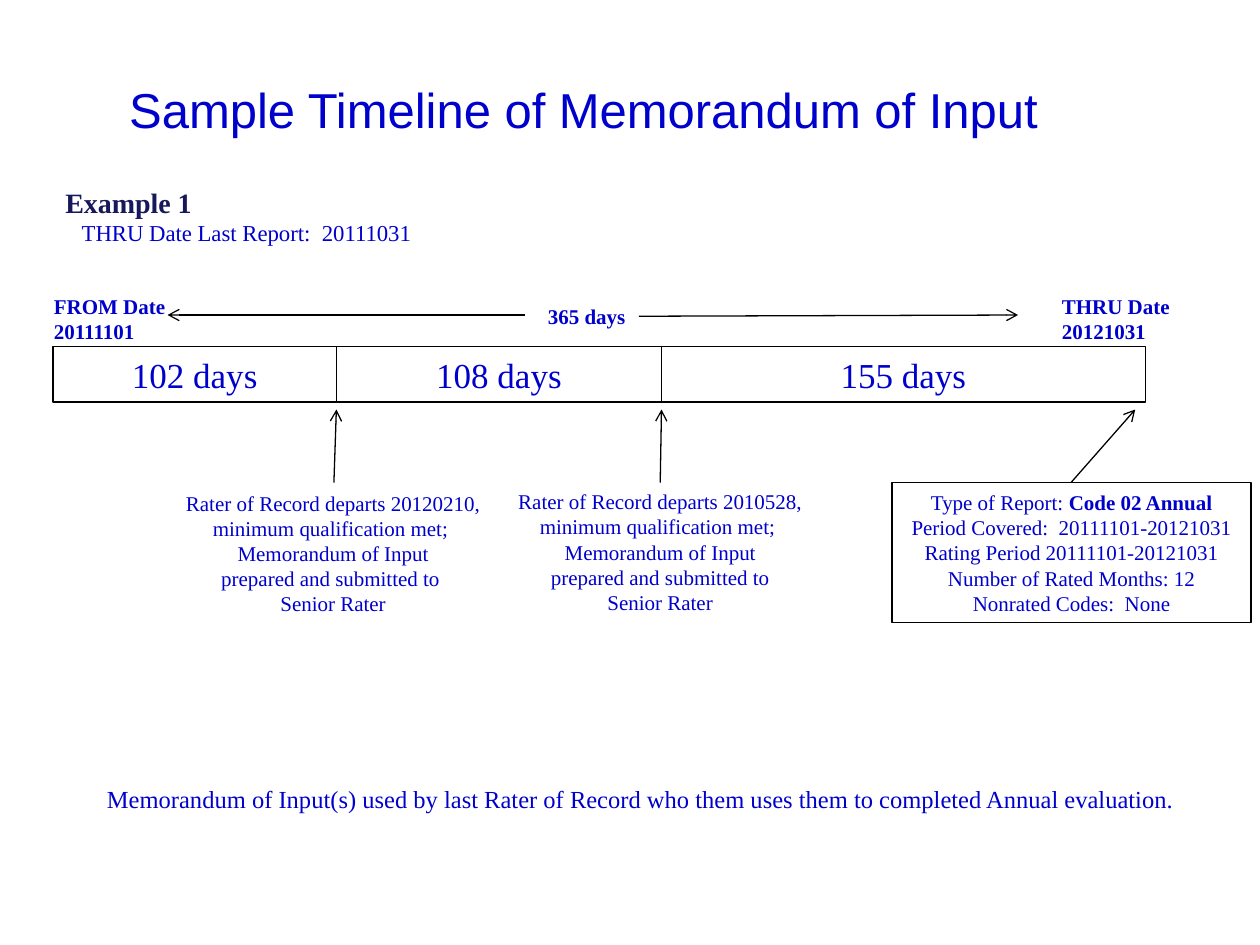
from lxml import etree
from pptx import Presentation
from pptx.dml.color import RGBColor
from pptx.enum.shapes import MSO_CONNECTOR, MSO_SHAPE
from pptx.enum.text import MSO_ANCHOR, PP_ALIGN
from pptx.oxml.ns import qn
from pptx.util import Inches, Pt

LEFT, CENTER = PP_ALIGN.LEFT, PP_ALIGN.CENTER
TOP, MIDDLE = MSO_ANCHOR.TOP, MSO_ANCHOR.MIDDLE
RECTANGLE, STRAIGHT = MSO_SHAPE.RECTANGLE, MSO_CONNECTOR.STRAIGHT

SERIF, SANS = "Times New Roman", "Arial"
BLUE, NAVY, BLACK = "0000CC", "17175C", "000000"

# Timeline grid, in inches
BAR_EDGES = [0.42, 2.67, 5.25, 9.09]
BAR_TOP, BAR_HEIGHT = 2.75, 0.44
SPAN_Y, DATE_TOP = 2.5, 2.28
POINTER_TOP, NOTE_TOP, NOTE_HEIGHT = 3.25, 3.83, 1.11


def color(value):
    return RGBColor.from_string(value)


def style(font, size, bold=False, name=SERIF, tint=BLUE):
    font.name, font.size, font.bold = name, Pt(size), bold
    font.color.rgb = color(tint)


def place(shape, left, top, width, height):
    shape.left, shape.top = Inches(left), Inches(top)
    shape.width, shape.height = Inches(width), Inches(height)


def write(shape, lines, size, bold=False, align=LEFT, wrap=True, anchor=TOP):
    """Fill a shape with one paragraph per line and return the paragraphs."""
    frame = shape.text_frame
    frame.word_wrap, frame.vertical_anchor = wrap, anchor
    frame.text = "\n".join(lines)
    for para in frame.paragraphs:
        para.alignment = align
        style(para.font, size, bold)
    return frame.paragraphs


def add_text(page, at, lines, size, **options):
    box = page.shapes.add_textbox(*map(Inches, at))
    return write(box, lines, size, **options)


def add_frame(page, at, lines, size, **options):
    """Outlined, unfilled rectangle with centred text."""
    box = page.shapes.add_shape(RECTANGLE, *map(Inches, at))
    box.shadow.inherit = False
    box.fill.background()
    box.line.color.rgb = color(BLACK)
    box.line.width = Pt(0.75)
    return write(box, lines, size, align=CENTER, anchor=MIDDLE, **options)


def add_arrow(page, start, end):
    arrow = page.shapes.add_connector(STRAIGHT, *map(Inches, start + end))
    arrow.line.color.rgb = color(BLACK)
    arrow.line.width = Pt(0.75)
    etree.SubElement(arrow.line._get_or_add_ln(), qn("a:tailEnd"), type="arrow")
    etree.SubElement(arrow._element.spPr, qn("a:effectLst"))


def add_heading(page):
    title = page.shapes.title
    place(title, 0.17, 0.58, 8.92, 0.57)
    para = write(title, ["Sample Timeline of Memorandum of Input"], 28,
                 align=CENTER, anchor=MIDDLE)[0]
    style(para.font, 28, name=SANS)

    example, last_report = add_text(
        page, (0.42, 1.42, 2.98, 0.59),
        ["Example 1", "THRU Date Last Report:  20111031"], 13, wrap=False)
    style(example.font, 16, bold=True, tint=NAVY)
    last_report._p.get_or_add_pPr().set("marL", str(Inches(0.13)))


def add_timeline(page):
    # Periods
    for days, left, right in zip((102, 108, 155), BAR_EDGES, BAR_EDGES[1:]):
        add_frame(page, (left, BAR_TOP, right - left, BAR_HEIGHT),
                  [f"{days} days"], 20)

    # First and last dates
    for left, label, date in ((0.33, "FROM Date", "20111101"),
                              (8.33, "THRU Date", "20121031")):
        add_text(page, (left, DATE_TOP, 1.17, 0.5), [label, date], 12, bold=True)

    # Whole span
    add_text(page, (4.25, 2.36, 0.82, 0.3), ["365 days"], 12, bold=True, wrap=False)
    add_arrow(page, (5.07, SPAN_Y + 0.01), (8.08, SPAN_Y))
    add_arrow(page, (4.17, SPAN_Y), (1.33, SPAN_Y))


def add_notes_below(page):
    # Rater departures
    for left, top, width, date, prepared in (
            (1.36, NOTE_TOP + 0.01, 2.57, "20120210", "prepared and submitted to "),
            (4, NOTE_TOP, 2.48, "2010528", "prepared and submitted to")):
        add_text(page, (left, top, width, NOTE_HEIGHT),
                 [f"Rater of Record departs {date},", "minimum qualification met; ",
                  "Memorandum of Input", prepared, "Senior Rater"],
                 12, align=CENTER, wrap=False)

    # Resulting report
    report = add_frame(
        page, (7.08, NOTE_TOP, 2.85, NOTE_HEIGHT),
        ["Type of Report: ", "Period Covered:  20111101-20121031",
         "Rating Period 20111101-20121031", "Number of Rated Months: 12",
         "Nonrated Codes:  None"], 12, wrap=False)
    span = report[0].add_run()
    span.text, span.font.bold = "Code 02 Annual", True

    # Pointers to the ends of the periods
    for start_x, end_x in ((2.65, 2.67), (5.24, 5.25), (8.5, 9.01)):
        add_arrow(page, (start_x, NOTE_TOP), (end_x, POINTER_TOP))

    # Closing remark
    add_text(page, (0.75, 6.17, 8.69, 0.34),
             ["Memorandum of Input(s) used by last Rater of Record who them "
              "uses them to completed Annual evaluation."], 14, wrap=False)


def main():
    deck = Presentation()
    deck.slide_width, deck.slide_height = Inches(10), Inches(7.5)
    page = deck.slides.add_slide(deck.slide_layouts[5])
    add_heading(page)
    add_timeline(page)
    add_notes_below(page)
    deck.save("out.pptx")


if __name__ == "__main__":
    main()
